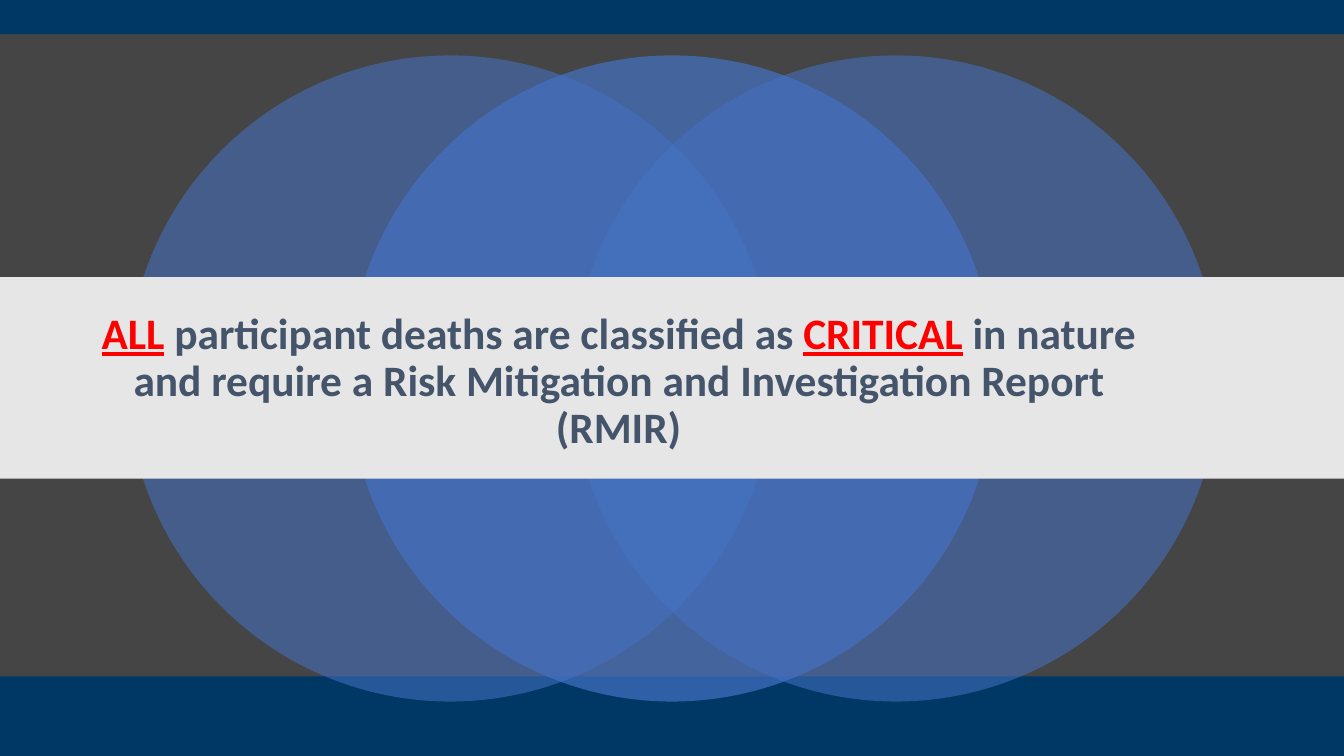
from dataclasses import dataclass

from lxml import etree
from pptx import Presentation
from pptx import util as u
from pptx.dml.color import RGBColor
from pptx.enum import shapes, text
from pptx.oxml import ns

COLORS = {
    "background": "454545",
    "navy": "003865",
    "circle": "4472C4",
    "band": "E7E6E6",
    "title": "44546A",
    "emphasis": "FF0000",
}
WIDTH, HEIGHT = 13.33, 7.5
DIAMETER = 6.41
RECT = shapes.MSO_SHAPE.RECTANGLE
OVAL = shapes.MSO_SHAPE.OVAL


@dataclass
class Block:
    kind: shapes.MSO_SHAPE
    left: float
    top: float
    width: float
    height: float
    color: str
    opacity: int = 100


BARS = [
    Block(RECT, 0, 6.71, WIDTH, 0.79, "navy"),
    Block(RECT, 0, 0, WIDTH, 0.34, "navy"),
]
CIRCLES = [
    Block(OVAL, left, 0.55, DIAMETER, DIAMETER, "circle", opacity)
    for left, opacity in [(1.26, 55), (5.68, 55), (3.46, 70)]
]
BAND = Block(RECT, 0, 2.75, WIDTH, 2, "band")


def rgb(name: str) -> RGBColor:
    return RGBColor.from_string(COLORS[name])


def draw_block(parent, block: Block) -> None:
    box = (block.left, block.top, block.width, block.height)
    sp = parent.add_shape(block.kind, *map(u.Inches, box))
    sp.shadow.inherit = False
    sp.fill.solid()
    sp.fill.fore_color.rgb = rgb(block.color)
    sp.line.fill.background()
    if block.opacity < 100:
        color = sp._element.spPr.find(".//" + ns.qn("a:srgbClr"))
        etree.SubElement(color, ns.qn("a:alpha"), val=str(block.opacity * 1000))


def add_text(p, content: str, *, color: str = "title", size: float = 31,
             bold: bool = True, underline: bool = False) -> None:
    r = p.add_run()
    r.text = content
    r.font.name = "Calibri"
    r.font.size = u.Pt(size)
    r.font.bold = bold
    r.font.underline = underline
    r.font.color.rgb = rgb(color)


def write_title(s) -> None:
    sp = s.shapes.title
    s.shapes._spTree.append(sp._element)
    sp.left, sp.top = u.Inches(0.69), u.Inches(3.04)
    sp.width, sp.height = u.Inches(10.89), u.Inches(1.51)
    tf = sp.text_frame
    tf.word_wrap = True
    tf.auto_size = text.MSO_AUTO_SIZE.NONE
    tf.vertical_anchor = text.MSO_ANCHOR.MIDDLE
    p = tf.paragraphs[0]
    p.alignment = text.PP_ALIGN.CENTER
    p.line_spacing = 0.9
    add_text(p, "ALL", color="emphasis", underline=True)
    add_text(p, " participant deaths are classified as ")
    add_text(p, "CRITICAL", color="emphasis", underline=True)
    add_text(p, " in nature and require a Risk Mitigation and Investigation Report (RMIR)")


def main() -> None:
    prs = Presentation()
    prs.slide_width, prs.slide_height = u.Inches(WIDTH), u.Inches(HEIGHT)
    s = prs.slides.add_slide(prs.slide_layouts[5])
    s.background.fill.solid()
    s.background.fill.fore_color.rgb = rgb("background")
    for bar in BARS:
        draw_block(s.shapes, bar)
    venn = s.shapes.add_group_shape()
    for circle in CIRCLES:
        draw_block(venn.shapes, circle)
    draw_block(s.shapes, BAND)
    write_title(s)
    prs.save("out.pptx")


if __name__ == "__main__":
    main()
